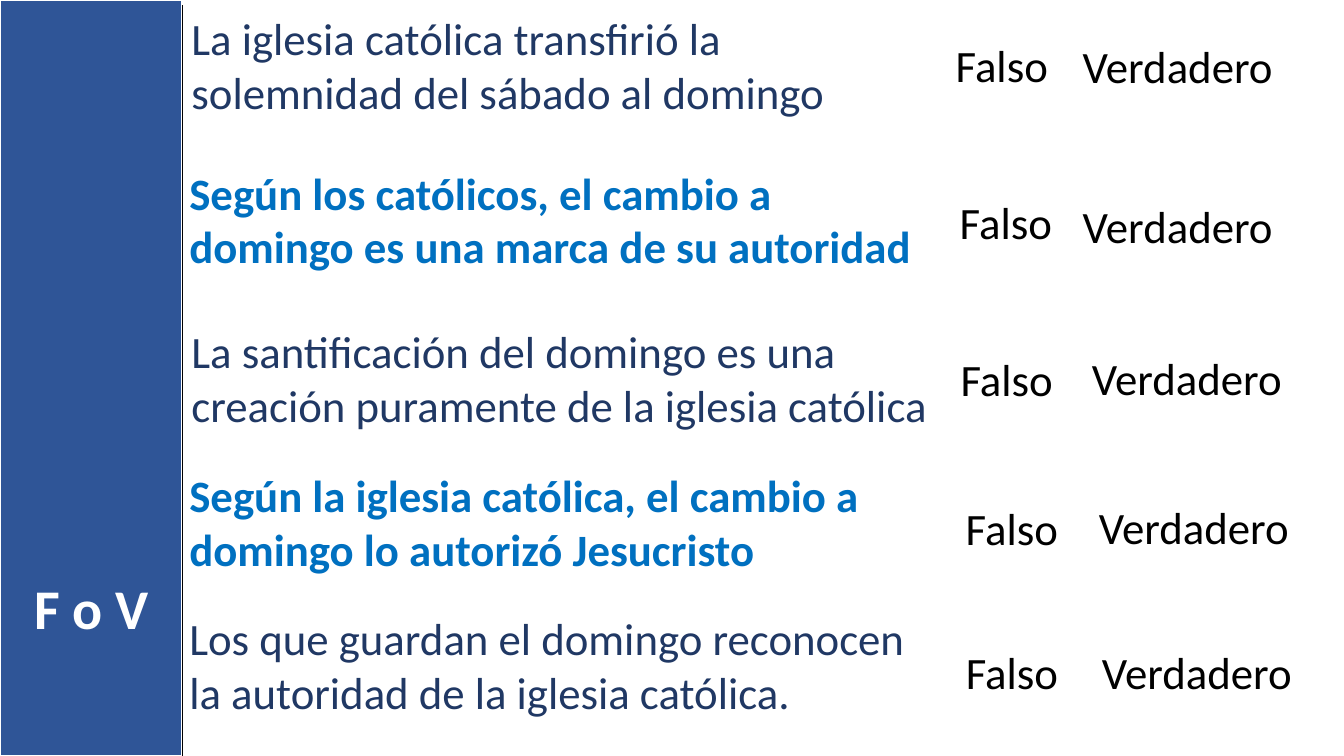
from dataclasses import dataclass

from lxml.etree import SubElement
from pptx import Presentation
from pptx.dml.color import RGBColor
from pptx.enum.shapes import MSO_CONNECTOR as Link, MSO_SHAPE as Form
from pptx.enum.text import MSO_AUTO_SIZE as Fit, PP_ALIGN as Align
from pptx.oxml.ns import qn
from pptx.util import Inches, Pt

WIDE, HIGH = Inches(13.33), Inches(7.5)
FONT = "Calibri"
SIDE = 13.58
TALL, LOW = 15.73, 8.53
NAVY, BLUE, BLACK, WHITE = "203864", "0070C0", "000000", "FFFFFF"


@dataclass(frozen=True)
class Spot:
    left: float
    top: float
    width: float


@dataclass(frozen=True)
class Item:
    text: str
    claim: Spot
    no: Spot
    yes: Spot


ITEMS = [
    Item("La iglesia católica transfirió la solemnidad del sábado al domingo",
         Spot(13.5, 0.8, 55.66), Spot(70.37, 4.27, 9.15), Spot(79.82, 4.4, 18)),
    Item("Según los católicos, el cambio a domingo es una marca de su autoridad",
         Spot(13.35, 21.2, 55.36), Spot(70.67, 25.07, 9.08), Spot(79.82, 25.6, 16.65)),
    Item("La santificación del domingo es una creación puramente de la iglesia católica",
         Spot(13.5, 42.13, 57.16), Spot(70.74, 45.87, 9.6), Spot(80.5, 45.73, 16.43)),
    Item("Según la iglesia católica, el cambio a domingo lo autorizó Jesucristo",
         Spot(13.35, 61.2, 52.29), Spot(71.12, 65.6, 8.93), Spot(81.02, 65.47, 15.9)),
    Item("Los que guardan el domingo reconocen la autoridad de la iglesia católica.",
         Spot(13.35, 80.13, 55.36), Spot(71.12, 84.67, 8.78), Spot(81.25, 84.67, 16.58)),
]


def across(share: float) -> int:
    return round(WIDE * share / 100)


def down(share: float) -> int:
    return round(HIGH * share / 100)


def tint(code: str) -> RGBColor:
    return RGBColor.from_string(code)


def write(slide, text: str, spot: Spot, height: float, color: str,
          bold: bool = False, size: int = 32, align: Align = Align.LEFT) -> None:
    box = slide.shapes.add_textbox(
        across(spot.left), down(spot.top), across(spot.width), down(height))
    frame = box.text_frame
    frame.word_wrap = True
    frame.auto_size = Fit.SHAPE_TO_FIT_TEXT
    line = frame.paragraphs[0]
    line.text = text
    line.alignment = align
    font = line.font
    font.name, font.size, font.bold = FONT, Pt(size), bold
    font.color.rgb = tint(color)


def panel(slide) -> None:
    band = slide.shapes.add_shape(Form.RECTANGLE, 0, 0, across(SIDE), HIGH)
    band.shadow.inherit = False
    band.fill.solid()
    band.fill.fore_color.rgb = tint("2F5597")
    band.line.color.rgb = tint(WHITE)
    band.line.width = Pt(1.5)

    write(slide, "F o V", Spot(0, 75.2, SIDE), 10.27, WHITE, True, 40, Align.CENTER)

    edge = slide.shapes.add_connector(
        Link.STRAIGHT, across(SIDE), down(0.67), across(SIDE), HIGH)
    edge.line.color.rgb = tint(BLACK)
    edge.line.width = Pt(1)
    SubElement(edge.element.spPr, qn("a:effectLst"))


def main() -> None:
    deck = Presentation()
    deck.slide_width, deck.slide_height = WIDE, HIGH
    slide = deck.slides.add_slide(deck.slide_layouts[6])
    panel(slide)
    for row, item in enumerate(ITEMS):
        bold = row % 2 == 1
        write(slide, item.text, item.claim, TALL, BLUE if bold else NAVY, bold)
        write(slide, "Falso", item.no, LOW, BLACK)
        write(slide, "Verdadero", item.yes, LOW, BLACK)
    deck.save("out.pptx")


if __name__ == "__main__":
    main()
